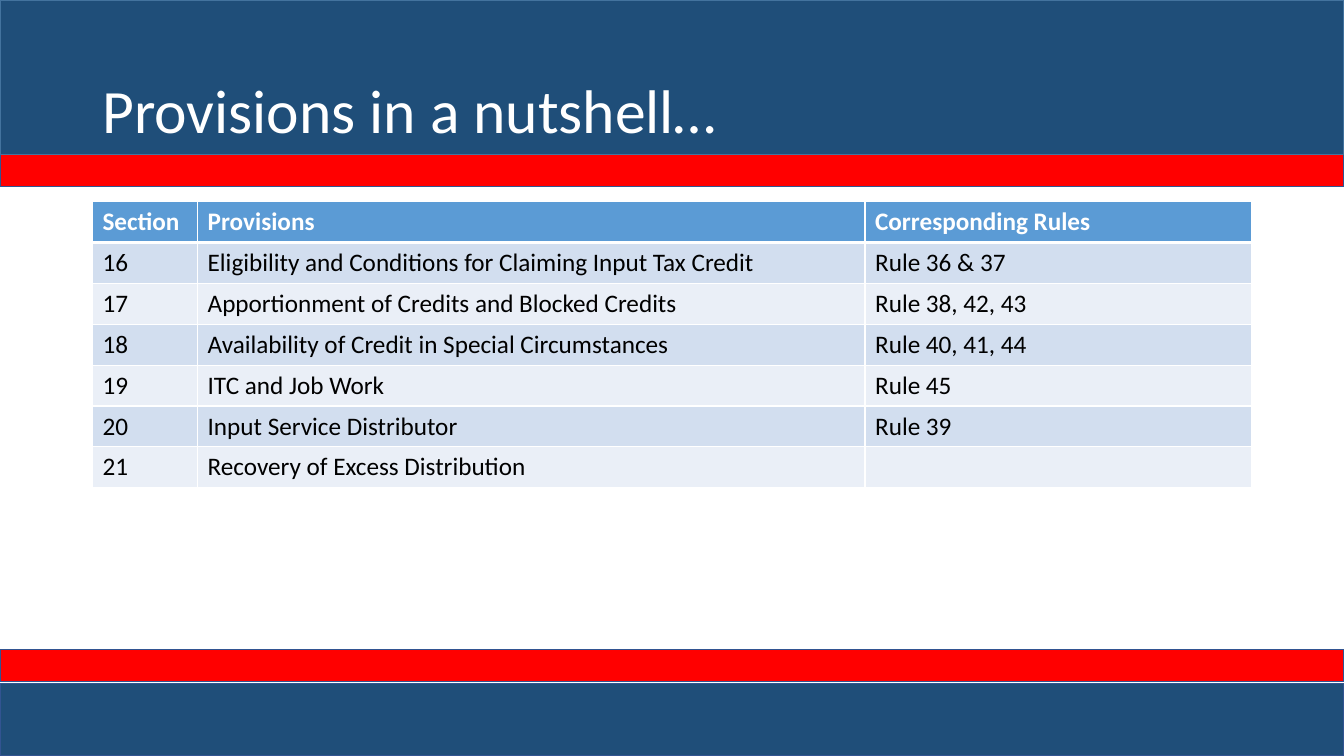
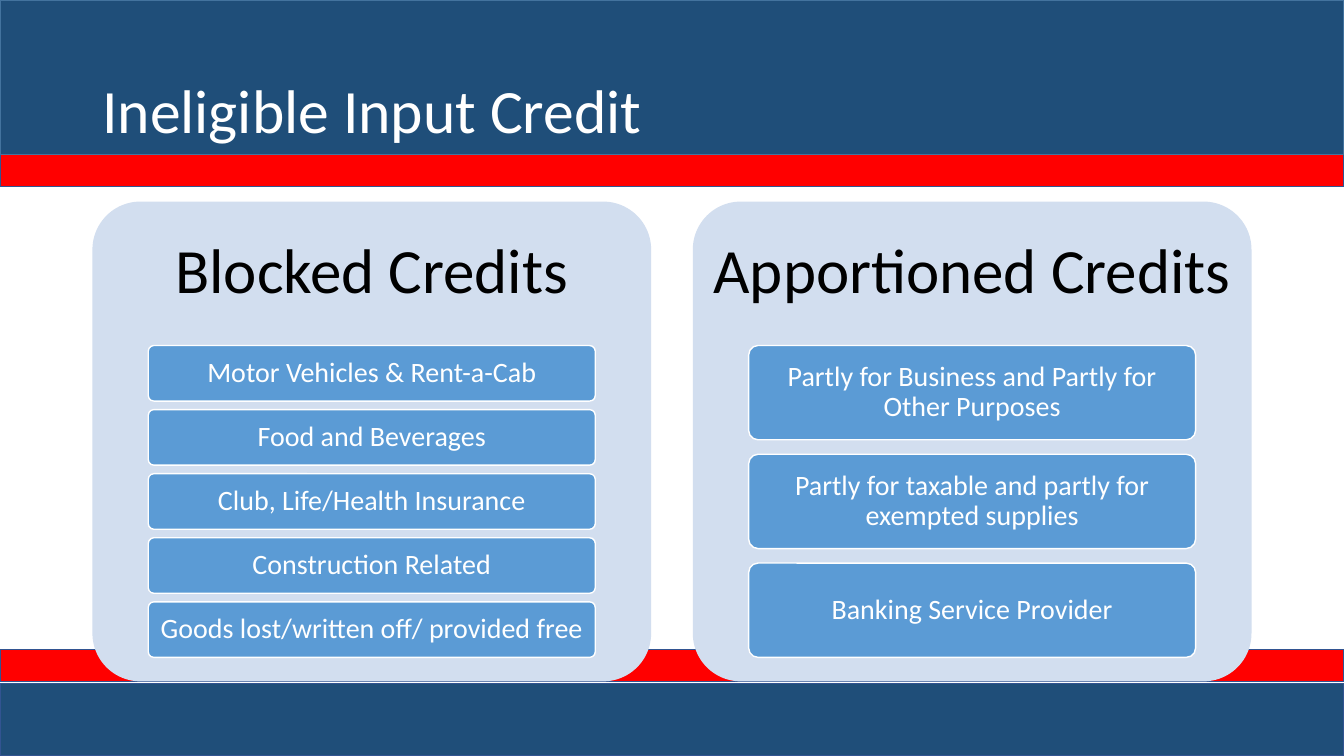
from pptx import Presentation
from pptx.dml.color import RGBColor
from pptx.enum.shapes import MSO_SHAPE
from pptx.enum.text import MSO_ANCHOR, PP_ALIGN
from pptx.oxml.ns import qn
from pptx.util import Cm, Pt
from lxml import etree

RECT = MSO_SHAPE.RECTANGLE
ROUND = MSO_SHAPE.ROUNDED_RECTANGLE
MIDDLE = MSO_ANCHOR.MIDDLE
LEFT, CENTER = PP_ALIGN.LEFT, PP_ALIGN.CENTER

WHITE = RGBColor(0xFF, 0xFF, 0xFF)
BLACK = RGBColor(0, 0, 0)
RED = RGBColor(0xFF, 0, 0)
NAVY = RGBColor(0x1F, 0x4E, 0x79)
EDGE = RGBColor(0x32, 0x54, 0x91)
TOP_EDGE = RGBColor(0x43, 0x73, 0x9E)
BLUE = RGBColor(0x5B, 0x9B, 0xD5)
PALE = RGBColor(0xD2, 0xDE, 0xEF)
FAINT = RGBColor(0xEA, 0xEF, 0xF7)

FONT = "Calibri"
WIDE, HIGH = 33.87, 19.05
BODY_X, BODY_Y, BODY_W = 2.33, 5.08, 29.21
BANDS = [  # top, height, fill, line
    (16.36, 0.81, RED, EDGE),
    (3.89, 0.81, RED, EDGE),
    (17.22, 1.83, NAVY, EDGE),
    (0, 3.89, NAVY, TOP_EDGE),
]

COLS = [2.65, 16.82, 9.74]
ROW_H = 1.03
RULES = [
    ("Section", "Provisions", "Corresponding Rules"),
    ("16", "Eligibility and Conditions for Claiming Input Tax Credit",
     "Rule 36 & 37"),
    ("17", "Apportionment of Credits and Blocked Credits", "Rule 38, 42, 43"),
    ("18", "Availability of Credit in Special Circumstances",
     "Rule 40, 41, 44"),
    ("19", "ITC and Job Work", "Rule 45"),
    ("20", "Input Service Distributor", "Rule 39"),
    ("21", "Recovery of Excess Distribution", ""),
]

PANEL_W, PANEL_H = 14.08, 12.09
PANELS = [
    ("Blocked Credits", [
        "Motor Vehicles & Rent-a-Cab",
        "Food and Beverages",
        "Club, Life/Health Insurance",
        "Construction Related",
        "Goods lost/written off/ provided free",
    ]),
    ("Apportioned Credits", [
        "Partly for Business and Partly for Other Purposes",
        "Partly for taxable and partly for exempted supplies",
        "Banking Service Provider",
    ]),
]


def style(para, size, color, align=LEFT, bold=False):
    para.alignment = align
    font = para.font
    font.name, font.size, font.bold = FONT, Pt(size), bold
    font.color.rgb = color


def write(shape, text, size, color, align, pad):
    """Fill a shape with one centred-height paragraph; pad is (x, y) in cm."""
    frame = shape.text_frame
    frame.word_wrap = True
    frame.vertical_anchor = MIDDLE
    frame.margin_left = frame.margin_right = Cm(pad[0])
    frame.margin_top = frame.margin_bottom = Cm(pad[1])
    para = frame.paragraphs[0]
    para.text = text
    para.line_spacing = 0.9
    style(para, size, color, align)


def add_box(slide, kind, x, y, w, h, fill, line=None):
    box = slide.shapes.add_shape(kind, Cm(x), Cm(y), Cm(w), Cm(h))
    box.shadow.inherit = False
    box.fill.solid()
    box.fill.fore_color.rgb = fill
    if line is None:
        box.line.fill.background()
    else:
        box.line.color.rgb = line
        box.line.width = Pt(1)
    if kind == ROUND:
        box.adjustments[0] = 0.1
    return box


def add_text(slide, x, y, w, h, *words):
    box = slide.shapes.add_textbox(Cm(x), Cm(y), Cm(w), Cm(h))
    write(box, *words)


def add_page(deck, title):
    """Add a slide with the shared bands and title."""
    slide = deck.slides.add_slide(deck.slide_layouts[6])
    for top, height, fill, line in BANDS:
        add_box(slide, RECT, 0, top, WIDE, height, fill, line)
    add_text(slide, BODY_X, 1.02, BODY_W, 3.68,
             title, 44, WHITE, LEFT, (0.25, 0.13))
    return slide


def set_edges(cell, top, bottom):
    """Draw white cell borders; top and bottom are widths in points."""
    props = cell._tc.get_or_add_tcPr()
    for side, width in (("L", 1), ("R", 1), ("T", top), ("B", bottom)):
        line = etree.SubElement(props, qn("a:ln" + side), w=str(Pt(width)))
        fill = etree.SubElement(line, qn("a:solidFill"))
        etree.SubElement(fill, qn("a:srgbClr"), val=str(WHITE))


def add_rules(slide, x, y):
    table = slide.shapes.add_table(
        len(RULES), len(COLS), Cm(x), Cm(y),
        Cm(sum(COLS)), Cm(ROW_H * len(RULES))).table
    for col, width in zip(table.columns, COLS):
        col.width = Cm(width)
    for i, texts in enumerate(RULES):
        head = i == 0
        table.rows[i].height = Cm(ROW_H)
        for j, text in enumerate(texts):
            cell = table.cell(i, j)
            set_edges(cell, 3 if i == 1 else 1, 3 if head else 1)
            cell.fill.solid()
            cell.fill.fore_color.rgb = (
                BLUE if head else PALE if i % 2 else FAINT)
            para = cell.text_frame.paragraphs[0]
            if text:
                para.text = text
            style(para, 18, WHITE if head else BLACK, bold=head)


def add_panel(slide, x, y, w, h, title, items):
    """Heading in the top 30 %, cards stacked down to 95 % of the height."""
    add_box(slide, ROUND, x, y, w, h, PALE)
    add_text(slide, x, y, w, 0.3 * h, title, 45, BLACK, CENTER, (0.45, 0.48))
    count = len(items)
    ratio = 2 / 13  # gap to card height
    card = 0.65 * h / (count + (count - 1) * ratio)
    for i, item in enumerate(items):
        top = y + 0.3 * h + i * card * (1 + ratio)
        box = add_box(slide, ROUND, x + 0.1 * w, top, 0.8 * w, card,
                      BLUE, WHITE)
        write(box, item, 20, WHITE, CENTER, (0.14, 0.1))


def main():
    deck = Presentation()
    deck.slide_width, deck.slide_height = Cm(WIDE), Cm(HIGH)

    slide = add_page(deck, "Provisions in a nutshell…")
    add_rules(slide, BODY_X, BODY_Y)

    slide = add_page(deck, "Ineligible Input Credit")
    for i, (title, items) in enumerate(PANELS):
        left = BODY_X + i * (BODY_W - PANEL_W)
        add_panel(slide, left, BODY_Y, PANEL_W, PANEL_H, title, items)

    deck.save("out.pptx")


if __name__ == "__main__":
    main()
